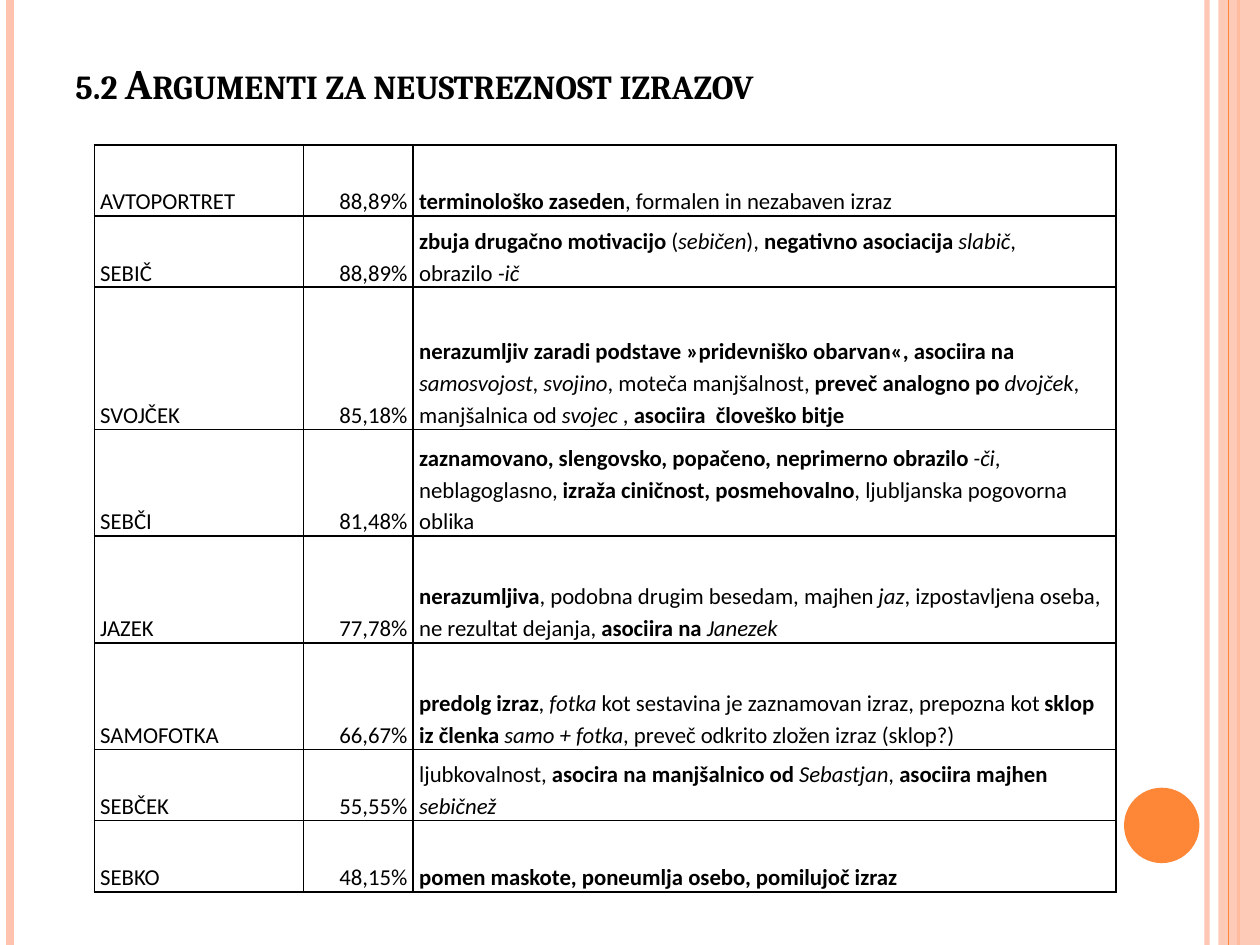
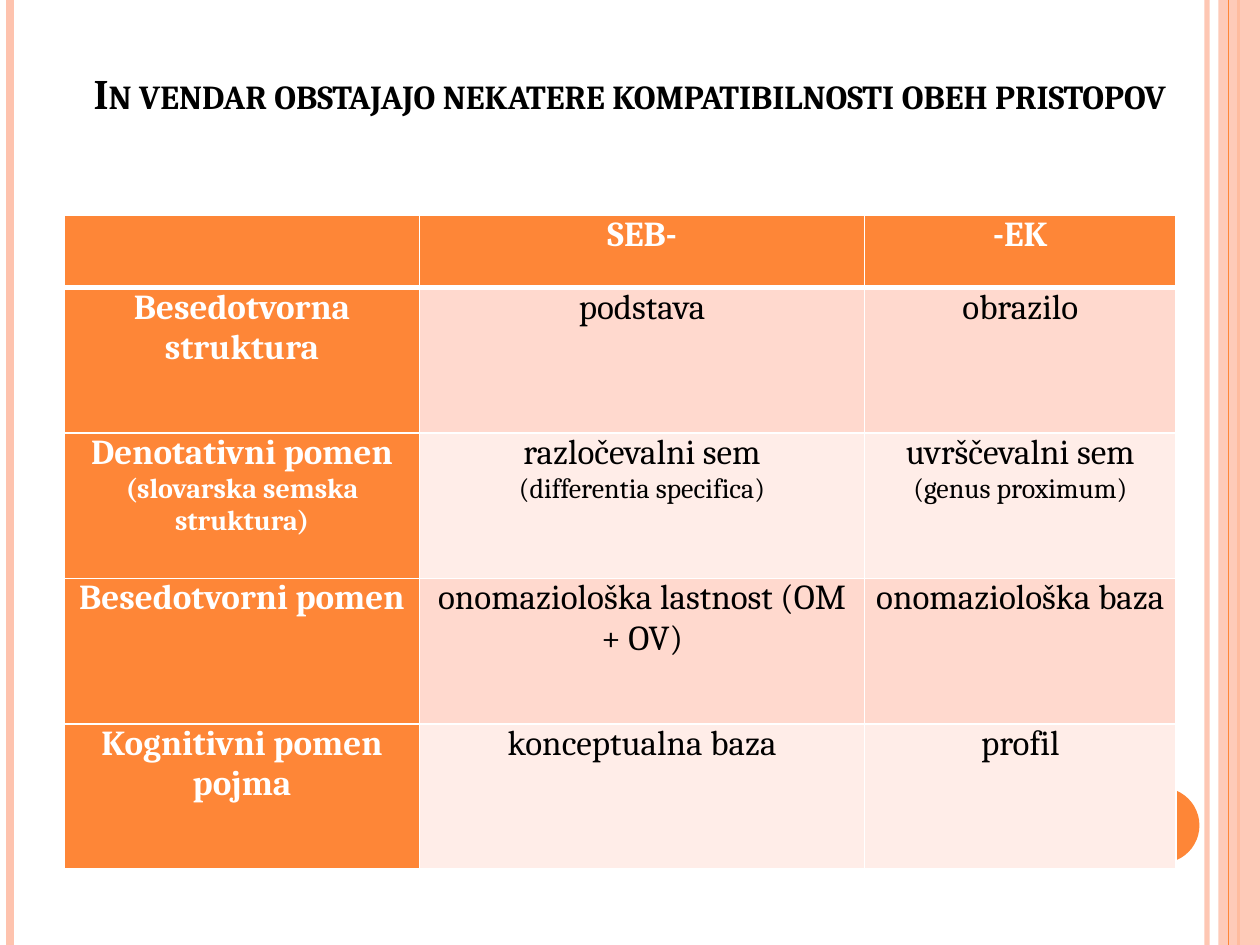
from lxml.etree import SubElement
from pptx import Presentation
from pptx.dml.color import RGBColor
from pptx.enum.shapes import MSO_CONNECTOR, MSO_SHAPE
from pptx.enum.text import MSO_ANCHOR, PP_ALIGN
from pptx.oxml.ns import qn
from pptx.util import Cm, Pt

WIDTH, HEIGHT = 25.4, 19.05
ORANGE, PEACH, BLACK, WHITE = "FE8637", "FEC3AE", "000000", "FFFFFF"
ROW_TINTS = ("FFD9CE", "FFEDE8")
LEFT, CENTER, RIGHT = PP_ALIGN.LEFT, PP_ALIGN.CENTER, PP_ALIGN.RIGHT


def rgb(value):
    return RGBColor.from_string(value)


def set_alpha(shape, percent):
    color = next(shape._element.spPr.iter(qn("a:srgbClr")))
    SubElement(color, qn("a:alpha"), val=str(percent * 1000))


def write(p, text, size=13, font="Calibri", color=BLACK, bold=False,
          align=LEFT, spacing=None, small_caps=False):
    """Fill a paragraph; *...* marks bold and _..._ marks italic."""
    p.alignment = align
    if spacing:
        p.line_spacing = spacing
    for i, part in enumerate(text.split("*")):
        for j, piece in enumerate(part.split("_")):
            if not piece:
                continue
            r = p.add_run()
            r.text = piece
            r.font.size, r.font.name = Pt(size), font
            r.font.color.rgb = rgb(color)
            r.font.bold = bold or i % 2 == 1
            r.font.italic = j % 2 == 1
            if small_caps:
                r.font._element.set("cap", "small")


class Deck:
    def __init__(self):
        self.prs = Presentation()
        self.prs.slide_width, self.prs.slide_height = Cm(WIDTH), Cm(HEIGHT)
        self.s = None

    def slide(self):
        self.s = self.prs.slides.add_slide(self.prs.slide_layouts[6])
        # Side lines, right band and disc
        set_alpha(self.vline(24.33, PEACH, 3), 93)
        self.vline(0.2, PEACH, 4.5)
        self.vline(24.97, ORANGE, 1.5)
        set_alpha(self.shape(MSO_SHAPE.RECTANGLE, 24.56, 0, 0.84, HEIGHT, PEACH), 87)
        self.vline(24.77, ORANGE, 0.75)
        self.shape(MSO_SHAPE.OVAL, 22.66, 15.88, 1.52, 1.52, ORANGE)

    def vline(self, x, color, weight):
        line = self.s.shapes.add_connector(
            MSO_CONNECTOR.STRAIGHT, Cm(x), Cm(0), Cm(x), Cm(HEIGHT))
        line.line.color.rgb = rgb(color)
        line.line.width = Pt(weight)
        SubElement(line._element.spPr, qn("a:effectLst"))
        return line

    def shape(self, kind, x, y, w, h, color):
        sp = self.s.shapes.add_shape(kind, Cm(x), Cm(y), Cm(w), Cm(h))
        sp.shadow.inherit = False
        sp.fill.solid()
        sp.fill.fore_color.rgb = rgb(color)
        sp.line.fill.background()
        return sp

    def title(self, text, x, y, w, h, align=LEFT):
        tf = self.s.shapes.add_textbox(Cm(x), Cm(y), Cm(w), Cm(h)).text_frame
        tf.word_wrap = True
        tf.vertical_anchor = MSO_ANCHOR.BOTTOM
        write(tf.paragraphs[0], text, size=24, font="Cambria", bold=True,
              align=align, small_caps=True)

    def table(self, x, y, widths, heights):
        table = self.s.shapes.add_table(
            len(heights), len(widths), Cm(x), Cm(y),
            Cm(sum(widths)), Cm(sum(heights))).table
        table.first_row = table.horz_banding = False
        for col, width in zip(table.columns, widths):
            col.width = Cm(width)
        for row, height in zip(table.rows, heights):
            row.height = Cm(height)
        return table

    def cell(self, cell, paragraphs, margin, border, fill=None,
             top=1, bottom=1, anchor=MSO_ANCHOR.TOP):
        """Style a cell and write its (text, format) paragraphs."""
        cell.margin_left = cell.margin_right = Cm(margin)
        cell.margin_top = cell.margin_bottom = 0
        cell.vertical_anchor = anchor
        tc_pr = cell._tc.get_or_add_tcPr()
        for side, weight in zip("LRTB", (1, 1, top, bottom)):
            ln = SubElement(tc_pr, qn("a:ln" + side), w=str(Pt(weight)))
            SubElement(SubElement(ln, qn("a:solidFill")), qn("a:srgbClr"), val=border)
        if fill:
            cell.fill.solid()
            cell.fill.fore_color.rgb = rgb(fill)
        else:
            cell.fill.background()
        tf = cell.text_frame
        for i, (text, fmt) in enumerate(paragraphs):
            write(tf.add_paragraph() if i else tf.paragraphs[0], text, **fmt)


# Term, share of answers, arguments, row height in units
ARGUMENTS = [
    ("AVTOPORTRET", "88,89%", "*terminološko zaseden*, formalen in nezabaven izraz", 1),
    ("SEBIČ", "88,89%", "*zbuja drugačno motivacijo *(_sebičen_), "
     "*negativno asociacija *_slabič_,\nobrazilo _-ič_", 1),
    ("SVOJČEK", "85,18%", "*nerazumljiv zaradi podstave »pridevniško obarvan«, "
     "asociira na *_samosvojost_, _svojino_, moteča manjšalnost, "
     "*preveč analogno po *_dvojček_, manjšalnica od _svojec_ , "
     "*asociira  človeško bitje*", 2),
    ("SEBČI", "81,48%", "*zaznamovano, slengovsko, popačeno, neprimerno obrazilo *"
     "_-či_, neblagoglasno, *izraža ciničnost, posmehovalno*, "
     "ljubljanska pogovorna oblika", 1.5),
    ("JAZEK", "77,78%", "*nerazumljiva*, podobna drugim besedam, majhen _jaz_, "
     "izpostavljena oseba, ne rezultat dejanja, *asociira na *_Janezek_", 1.5),
    ("SAMOFOTKA", "66,67%", "*predolg izraz*, _fotka_ kot sestavina je zaznamovan "
     "izraz, prepozna kot *sklop iz členka *_samo + fotka_, "
     "preveč odkrito zložen izraz (sklop?)", 1.5),
    ("SEBČEK", "55,55%", "ljubkovalnost, *asocira na manjšalnico od *_Sebastjan_, "
     "*asociira majhen *_sebičnež_", 1),
    ("SEBKO", "48,15%", "*pomen maskote, poneumlja osebo, pomilujoč izraz*", 1),
]

COMPATIBILITY = [
    ("", "SEB-", "-EK"),
    ("Besedotvorna struktura", "podstava", "obrazilo"),
    ("Denotativni pomen\n(slovarska semska struktura)",
     "razločevalni sem\n(differentia specifica)", "uvrščevalni sem\n(genus proximum)"),
    ("Besedotvorni pomen", "onomaziološka lastnost (OM + OV)", "onomaziološka baza"),
    ("Kognitivni pomen pojma", "konceptualna baza", "profil"),
]


def arguments_slide(deck):
    deck.slide()
    deck.title("5.2 Argumenti za neustreznost izrazov", 1.27, 0.76, 20.75, 1.55)
    unit = 15.06 / sum(row[3] for row in ARGUMENTS)
    table = deck.table(1.9, 2.92, (4.22, 2.21, 14.17),
                       [row[3] * unit for row in ARGUMENTS])
    for r, row in enumerate(ARGUMENTS):
        for c, text in enumerate(row[:3]):
            fmt = dict(align=RIGHT if c == 1 else LEFT, spacing=1.15)
            deck.cell(table.cell(r, c), [(line, fmt) for line in text.split("\n")],
                      margin=0.12, border=BLACK, anchor=MSO_ANCHOR.BOTTOM)


def compatibility_slide(deck):
    deck.slide()
    deck.title("In vendar obstajajo nekatere kompatibilnosti obeh pristopov",
               0.5, 0, 24.4, 2.51, align=CENTER)
    table = deck.table(1.3, 4.33, (7.16, 8.97, 6.28), [1.47] + [2.93] * 4)
    for r, row in enumerate(COMPATIBILITY):
        for c, text in enumerate(row):
            heading = r == 0 or c == 0
            fmt = dict(font="Cambria", align=CENTER, bold=heading,
                       color=WHITE if heading else BLACK)
            lines = [(line, dict(fmt, size=16 if i else 20))
                     for i, line in enumerate(text.split("\n"))]
            deck.cell(table.cell(r, c), lines, margin=0.19, border=WHITE,
                      fill=ORANGE if heading else ROW_TINTS[(r - 1) % 2],
                      top=3 if r == 1 else 1, bottom=3 if r == 0 else 1)


def main():
    deck = Deck()
    arguments_slide(deck)
    compatibility_slide(deck)
    deck.prs.save("out.pptx")


if __name__ == "__main__":
    main()
